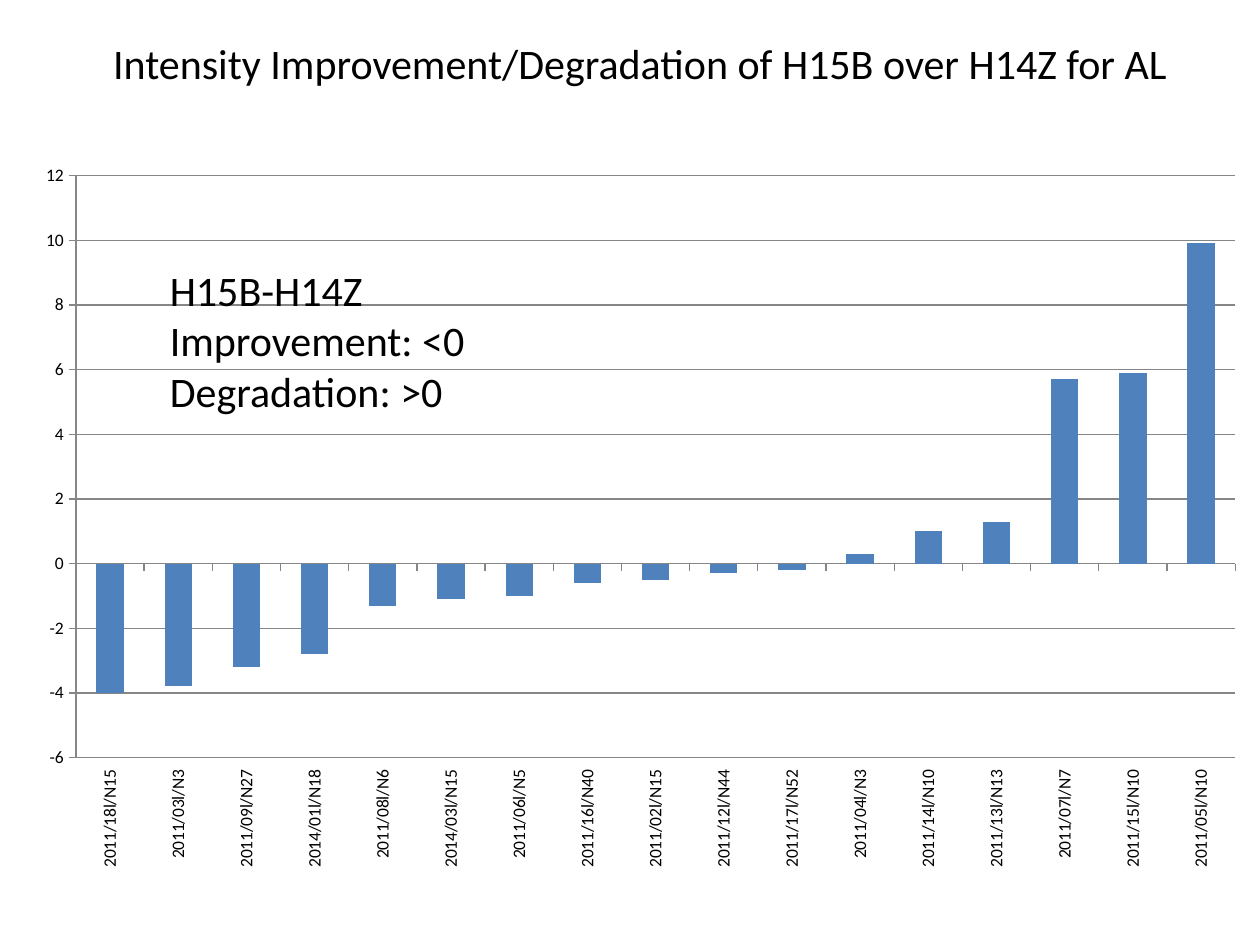
"""Build a slide charting intensity change of H15B over H14Z by storm."""
from pptx import Presentation
from pptx.chart.data import CategoryChartData
from pptx.dml.color import RGBColor
from pptx.enum.chart import XL_CHART_TYPE as ChartType
from pptx.enum.chart import XL_TICK_LABEL_POSITION as LabelPosition
from pptx.enum.chart import XL_TICK_MARK as TickMark
from pptx.enum.text import MSO_ANCHOR as Anchor
from pptx.enum.text import PP_ALIGN as Align
from pptx.util import Inches, Pt

COLORS = {"text": "000000", "bar": "4F81BD", "line": "868686", "background": "FFFFFF"}
FONT = "Calibri"
TITLE = "Intensity Improvement/Degradation of H15B over H14Z for AL"
NOTE_LINES = ["H15B-H14Z", "Improvement: <0", "Degradation: >0"]
INTENSITY_CHANGES = {
    "2011/18l/N15": -4, "2011/03l/N3": -3.8, "2011/09l/N27": -3.2,
    "2014/01l/N18": -2.8, "2011/08l/N6": -1.3, "2014/03l/N15": -1.1,
    "2011/06l/N5": -1, "2011/16l/N40": -0.6, "2011/02l/N15": -0.5,
    "2011/12l/N44": -0.3, "2011/17l/N52": -0.2, "2011/04l/N3": 0.3,
    "2011/14l/N10": 1, "2011/13l/N13": 1.3, "2011/07l/N7": 5.7,
    "2011/15l/N10": 5.9, "2011/05l/N10": 9.9,
}


def set_attributes(target, values):
    """Set each named attribute of the target."""
    for name, value in values.items():
        setattr(target, name, value)


class SlideBuilder:
    """Hold the style and the current slide, and add elements to it."""

    def __init__(self, slide, colors, font_name):
        self.slide = slide
        self.colors = {name: RGBColor.from_string(value) for name, value in colors.items()}
        self.font_name = font_name
        fill = slide.background.fill
        fill.solid()
        fill.fore_color.rgb = self.colors["background"]

    def format_font(self, font, size):
        set_attributes(font, {"name": self.font_name, "size": Pt(size), "bold": False})
        font.color.rgb = self.colors["text"]

    def write_lines(self, shape, lines, size, alignment, anchor):
        frame = shape.text_frame
        set_attributes(frame, {"word_wrap": True, "vertical_anchor": anchor})
        frame.text = "\n".join(lines)
        for paragraph in frame.paragraphs:
            paragraph.alignment = alignment
            self.format_font(paragraph.runs[0].font, size)

    def add_title(self, text, left, top, width, height):
        title = self.slide.shapes.title
        box = {"left": left, "top": top, "width": width, "height": height}
        set_attributes(title, {name: Inches(value) for name, value in box.items()})
        self.write_lines(title, [text], 24, Align.CENTER, Anchor.MIDDLE)

    def add_text(self, lines, *box):
        shape = self.slide.shapes.add_textbox(*map(Inches, box))
        self.write_lines(shape, lines, 24, Align.LEFT, Anchor.TOP)

    def format_line(self, line):
        line.color.rgb = self.colors["line"]
        line.width = Pt(0.75)

    def add_column_chart(self, values, *box):
        data = CategoryChartData()
        data.categories = list(values)
        data.add_series("Series 1", list(values.values()))
        frame = self.slide.shapes.add_chart(
            ChartType.COLUMN_CLUSTERED, *map(Inches, box), data)
        chart = frame.chart
        set_attributes(chart, {"has_legend": False, "has_title": False})
        self.format_font(chart.font, 10)

        plot = chart.plots[0]
        set_attributes(plot, {"gap_width": 150, "vary_by_categories": False})
        series = plot.series[0]
        series.invert_if_negative = False
        series.format.fill.solid()
        series.format.fill.fore_color.rgb = self.colors["bar"]

        category_axis, value_axis = chart.category_axis, chart.value_axis
        for axis in (category_axis, value_axis):
            set_attributes(axis, {"major_tick_mark": TickMark.OUTSIDE,
                                  "minor_tick_mark": TickMark.NONE})
            self.format_line(axis.format.line)
            self.format_font(axis.tick_labels.font, 10)
        category_axis.tick_label_position = LabelPosition.LOW
        category_axis._element.txPr.bodyPr.set("rot", "-5400000")
        set_attributes(value_axis, {"minimum_scale": -6, "maximum_scale": 12,
                                    "major_unit": 2, "has_major_gridlines": True})
        self.format_line(value_axis.major_gridlines.format.line)


def main():
    presentation = Presentation()
    set_attributes(presentation, {"slide_width": Inches(10), "slide_height": Inches(7.5)})
    slide = presentation.slides.add_slide(presentation.slide_layouts[5])
    builder = SlideBuilder(slide, COLORS, FONT)
    builder.add_column_chart(INTENSITY_CHANGES, 0.17, 1.2, 9.83, 5.8)
    builder.add_title(TITLE, 0.58, 0.25, 9, 0.5)
    builder.add_text(NOTE_LINES, 1.25, 2.05, 3, 1.58)
    presentation.save("out.pptx")


if __name__ == "__main__":
    main()
